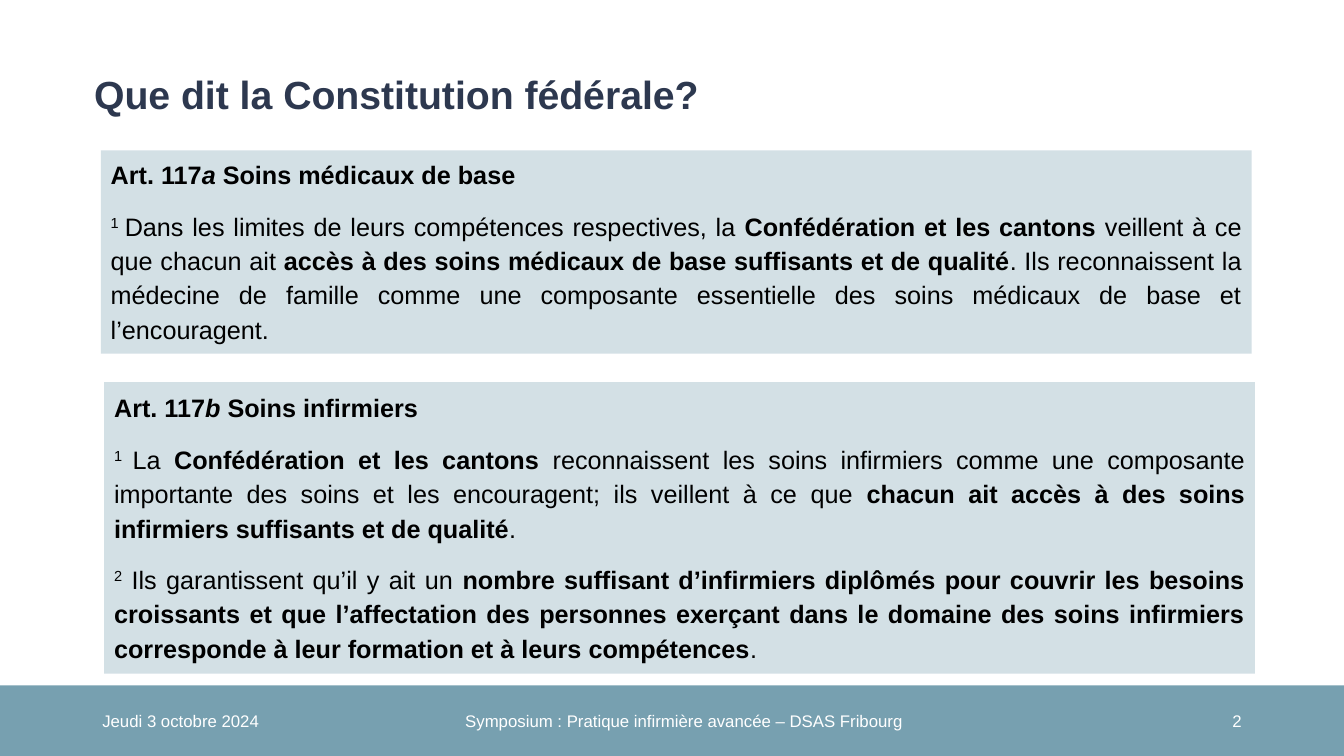
from pptx import Presentation
from pptx.dml.color import RGBColor
from pptx.enum.shapes import MSO_SHAPE
from pptx.enum.text import MSO_ANCHOR, PP_ALIGN
from pptx.util import Inches, Pt

NAVY = RGBColor(0x2D, 0x38, 0x4F)
TEAL = RGBColor(0x77, 0xA0, 0xB0)
PALE = RGBColor(0xD3, 0xE0, 0xE5)
BLACK = RGBColor(0, 0, 0)
WHITE = RGBColor(0xFF, 0xFF, 0xFF)
COLS, ROWS = 16, 9
BOLD, ITALIC, SUPER = "bold", "italic", "super"

ARTICLES = [
    # column, row, height in rows, heading, clauses
    (1.2, 1.79, 2.42, ("Art. 117", ("a", ITALIC), " Soins médicaux de base"), [
        (("1 ", SUPER), "Dans les limites de leurs compétences respectives, la ",
         ("Confédération et les cantons ", BOLD), "veillent à ce que chacun ait ",
         ("accès à des soins médicaux de base suffisants et de qualité", BOLD),
         ". Ils reconnaissent la médecine de famille comme une composante "
         "essentielle des soins médicaux de base et l’encouragent."),
    ]),
    (1.24, 4.55, 3.47, ("Art. 117", ("b", ITALIC), " Soins infirmiers"), [
        (("1 ", SUPER), "La ", ("Confédération et les cantons ", BOLD),
         "reconnaissent les soins infirmiers comme une composante importante "
         "des soins et les encouragent; ils veillent à ce que ",
         ("chacun ait accès à des soins infirmiers suffisants et de qualité", BOLD),
         ". "),
        (("2", SUPER), " Ils garantissent qu’il y ait un ",
         ("nombre suffisant d’infirmiers diplômés pour couvrir les besoins "
          "croissants et que l’affectation des personnes exerçant dans le domaine "
          "des soins infirmiers corresponde à leur formation et à leurs "
          "compétences", BOLD), ". "),
    ]),
]
FOOTER = [
    # column, width in columns, alignment, text
    (1.1, 3.6, PP_ALIGN.LEFT, "Jeudi 3 octobre 2024"),
    (5.3, 5.69, PP_ALIGN.CENTER,
     "Symposium : Pratique infirmière avancée – DSAS Fribourg"),
    (11.3, 3.6, PP_ALIGN.RIGHT, "2"),
]


class SlideBuilder:
    """Places styled elements on a grid of COLS by ROWS."""

    font = "Arial"

    def __init__(self, prs):
        self.col = prs.slide_width / COLS
        self.row = prs.slide_height / ROWS
        self.slide = prs.slides.add_slide(prs.slide_layouts[5])

    def box(self, x, y, w, h):
        return (round(x * self.col), round(y * self.row),
                round(w * self.col), round(h * self.row))

    def style(self, p, size, color, align=PP_ALIGN.LEFT, bold=False):
        p.alignment = align
        p.font.name, p.font.size, p.font.bold = self.font, Pt(size), bold
        p.font.color.rgb = color

    def add_runs(self, p, parts):
        """Add plain strings and (text, mark) pairs as runs."""
        for part in parts:
            text, mark = (part, None) if isinstance(part, str) else part
            r = p.add_run()
            r.text = text
            if mark == BOLD:
                r.font.bold = True
            elif mark == ITALIC:
                r.font.italic = True
            elif mark == SUPER:
                r.font._element.set("baseline", "30000")

    def title(self, text, *cells):
        sp = self.slide.shapes.title
        sp.left, sp.top, sp.width, sp.height = self.box(*cells)
        tf = sp.text_frame
        tf.text = text
        tf.vertical_anchor = MSO_ANCHOR.TOP
        p = tf.paragraphs[0]
        p.line_spacing = 0.9
        p.space_before = Pt(0)
        self.style(p, 28, NAVY, bold=True)

    def panel(self, color, *cells):
        sp = self.slide.shapes.add_shape(MSO_SHAPE.RECTANGLE, *self.box(*cells))
        sp.shadow.inherit = False
        sp.fill.solid()
        sp.fill.fore_color.rgb = color
        sp.line.fill.background()
        return sp

    def article(self, x, y, h, heading, clauses):
        tf = self.panel(PALE, x, y, 13.7, h).text_frame
        tf.word_wrap = True
        tf.vertical_anchor = MSO_ANCHOR.MIDDLE
        p = tf.paragraphs[0]
        self.style(p, 18, BLACK, bold=True)
        self.add_runs(p, heading)
        for clause in clauses:
            p.space_after = Pt(12)
            p = tf.add_paragraph()
            p.line_spacing = 1.14
            self.style(p, 18, BLACK, PP_ALIGN.JUSTIFY)
            self.add_runs(p, clause)

    def footer(self, x, w, align, text):
        tf = self.slide.shapes.add_textbox(*self.box(x, 8.34, w, 0.48)).text_frame
        tf.word_wrap = True
        tf.vertical_anchor = MSO_ANCHOR.MIDDLE
        tf.text = text
        self.style(tf.paragraphs[0], 12, WHITE, align)


def main():
    prs = Presentation()
    prs.slide_width, prs.slide_height = Inches(13.33), Inches(7.5)
    s = SlideBuilder(prs)
    s.title("Que dit la Constitution fédérale?", 1, 0.84, 14.16, 0.5)
    s.panel(TEAL, 0, 8.16, COLS, 0.84)
    for item in FOOTER:
        s.footer(*item)
    for item in ARTICLES:
        s.article(*item)
    prs.save("out.pptx")


if __name__ == "__main__":
    main()
